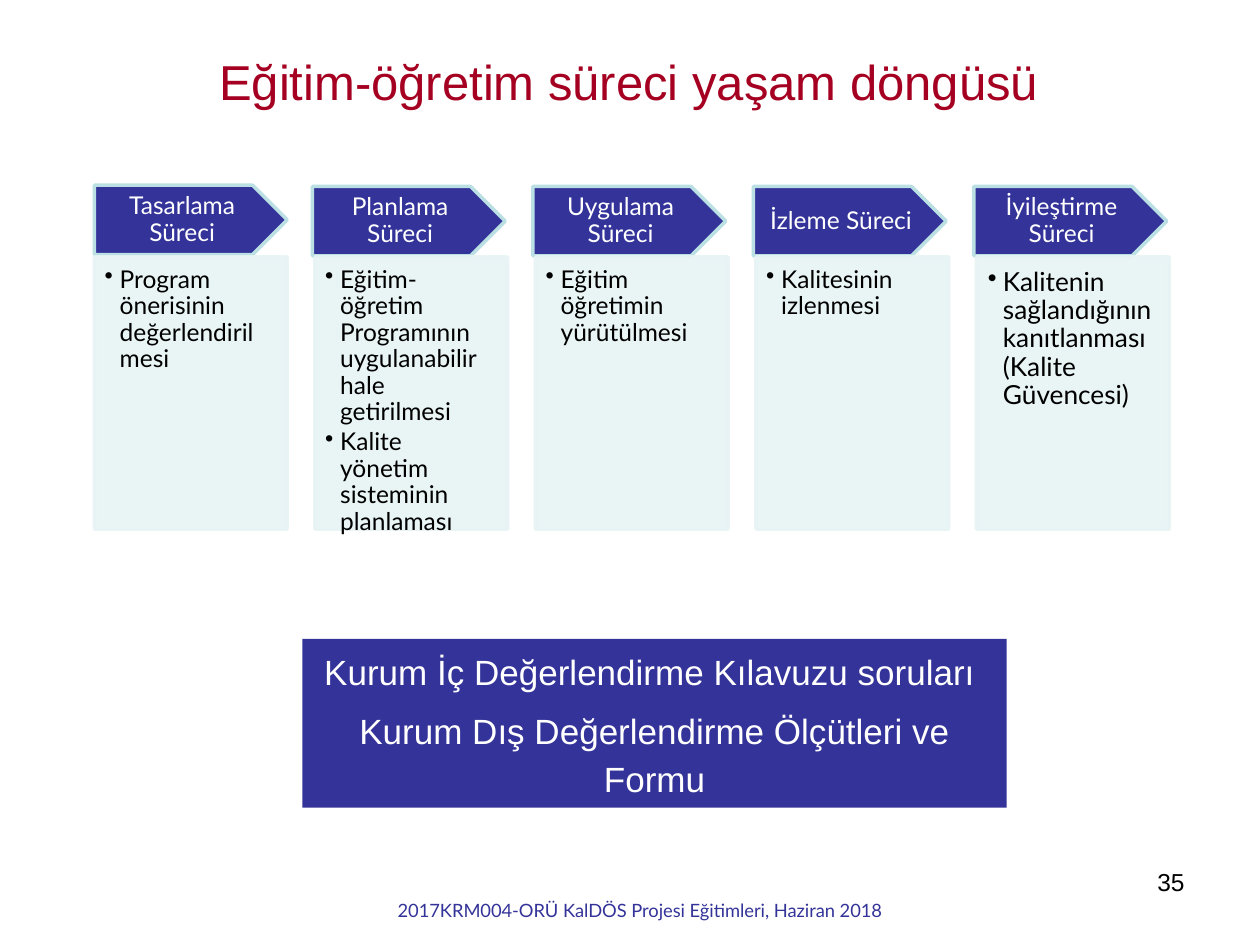
from dataclasses import dataclass

from pptx import Presentation
from pptx.dml.color import RGBColor
from pptx.enum.shapes import MSO_SHAPE as Shape
from pptx.enum.text import MSO_ANCHOR as Anchor, PP_ALIGN as Align
from pptx.oxml.ns import qn
from pptx.util import Inches, Pt
from lxml.etree import SubElement

WIDTH, HEIGHT = 10, 7.5
COLORS = {
    "title": "A50021",
    "navy": "333399",
    "edge": "BBE0E3",
    "card": "E7F3F4",
    "white": "FFFFFF",
    "black": "000000",
}

# Column grid for the process stages
LEFT, PITCH, COL_W = 0.75, 1.75, 1.53
HEAD_TOP, HEAD_H = 1.48, 0.55
CARD_TOP, CARD_H = 2.04, 2.16
HEAD_SHIFT = -0.02
HEAD_INSETS = (0.11, 0.06, 0.11, 0.06)
CARD_INSETS = (0.08, 0.08, 0.11, 0.12)


@dataclass
class Stage:
    name: str
    points: tuple[str, ...]
    size: float = 14
    dx: float = HEAD_SHIFT
    dy: float = 0
    extra_inset: float = 0


STAGES = [
    Stage("Tasarlama Süreci", ("Program önerisinin değerlendirilmesi",), dx=0, dy=-0.01),
    Stage("Planlama Süreci", (
        "Eğitim-öğretim Programının uygulanabilir hale getirilmesi",
        "Kalite yönetim sisteminin planlaması",
    )),
    Stage("Uygulama Süreci", ("Eğitim öğretimin yürütülmesi",)),
    Stage("İzleme Süreci", ("Kalitesinin izlenmesi",)),
    Stage("İyileştirme Süreci", ("Kalitenin sağlandığının kanıtlanması (Kalite Güvencesi)",),
          size=15, extra_inset=0.01),
]


def rgb(name: str) -> RGBColor:
    return RGBColor.from_string(COLORS[name])


def set_text(shape, lines, size, font, color, align=Align.CENTER, anchor=Anchor.TOP,
             insets=(0.1, 0.05, 0.1, 0.05), wrap=True, **para_format):
    """Fill a shape's text frame, one paragraph per line."""
    tf = shape.text_frame
    margins = zip(("margin_left", "margin_top", "margin_right", "margin_bottom"),
                  map(Inches, insets))
    for key, value in {"word_wrap": wrap, "vertical_anchor": anchor, **dict(margins)}.items():
        setattr(tf, key, value)
    for i, line in enumerate(lines):
        p = tf.add_paragraph() if i else tf.paragraphs[0]
        for key, value in {"alignment": align, **para_format}.items():
            setattr(p, key, value)
        r = p.add_run()
        r.text = line
        for key, value in {"size": Pt(size), "name": font}.items():
            setattr(r.font, key, value)
        r.font.color.rgb = rgb(color)


def add_box(s, kind: Shape, box, fill: str, edge: str | None = None):
    sp = s.shapes.add_shape(kind, *map(Inches, box))
    sp.shadow.inherit = False
    sp.fill.solid()
    sp.fill.fore_color.rgb = rgb(fill)
    if edge:
        sp.line.color.rgb = rgb(edge)
        sp.line.width = Pt(2)
    else:
        sp.line.fill.background()
    return sp


def add_label(s, box, text: str, **style):
    set_text(s.shapes.add_textbox(*map(Inches, box)), [text], **style)


def set_alpha(sp, percent: int):
    """Make fill and line of a shape partly transparent."""
    for color in sp._element.spPr.iter(qn("a:srgbClr")):
        SubElement(color, qn("a:alpha"), val=str(percent * 1000))


def add_bullets(sp, indent: float):
    for p in sp.text_frame.paragraphs:
        pPr = p._p.get_or_add_pPr()
        pPr.set("marL", str(Inches(indent)))
        pPr.set("indent", str(-Inches(indent)))
        SubElement(pPr, qn("a:buChar"), char="•")


def add_stage(s, stage: Stage, column: int):
    x = LEFT + column * PITCH
    head = add_box(s, Shape.PENTAGON, (x + stage.dx, HEAD_TOP + stage.dy, COL_W, HEAD_H),
                   "navy", "edge")
    set_text(head, [stage.name], 14, "Lato", "white", anchor=Anchor.MIDDLE,
             insets=HEAD_INSETS, line_spacing=0.9)
    card = add_box(s, Shape.RECTANGLE, (x, CARD_TOP, COL_W, CARD_H), "card", "card")
    set_alpha(card, 90)
    set_text(card, stage.points, stage.size, "Lato", "black", align=Align.LEFT,
             insets=[inset + stage.extra_inset for inset in CARD_INSETS],
             line_spacing=0.9, space_after=Pt(2))
    add_bullets(card, 0.12)


def main():
    prs = Presentation()
    prs.slide_width, prs.slide_height = Inches(WIDTH), Inches(HEIGHT)
    s = prs.slides.add_slide(prs.slide_layouts[5])

    # Title
    title = s.shapes.title
    for key, value in {"left": 1.64, "top": 0.36, "width": 6.89, "height": 0.57}.items():
        setattr(title, key, Inches(value))
    set_text(title, ["Eğitim-öğretim süreci yaşam döngüsü"], 28, "Arial", "title",
             align=Align.LEFT, wrap=False)

    # Process stages
    for column, stage in enumerate(STAGES):
        add_stage(s, stage, column)

    # Guideline panel
    panel = add_box(s, Shape.RECTANGLE, (2.4, 5.07, 5.59, 1.34), "navy")
    set_text(panel, ["Kurum İç Değerlendirme Kılavuzu soruları ",
                     "Kurum Dış Değerlendirme Ölçütleri ve Formu"],
             20, "Arial", "white", line_spacing=1.14, space_after=Pt(6))

    # Footer and page number
    add_label(s, (2.87, 7.09, 4.42, 0.31),
              "2017KRM004-ORÜ KalDÖS Projesi Eğitimleri, Haziran 2018",
              size=10.5, font="Lato", color="navy")
    add_label(s, (7.17, 6.83, 2.33, 0.52), "35",
              size=14, font="Arial", color="black", align=Align.RIGHT)

    prs.save("out.pptx")


if __name__ == "__main__":
    main()
